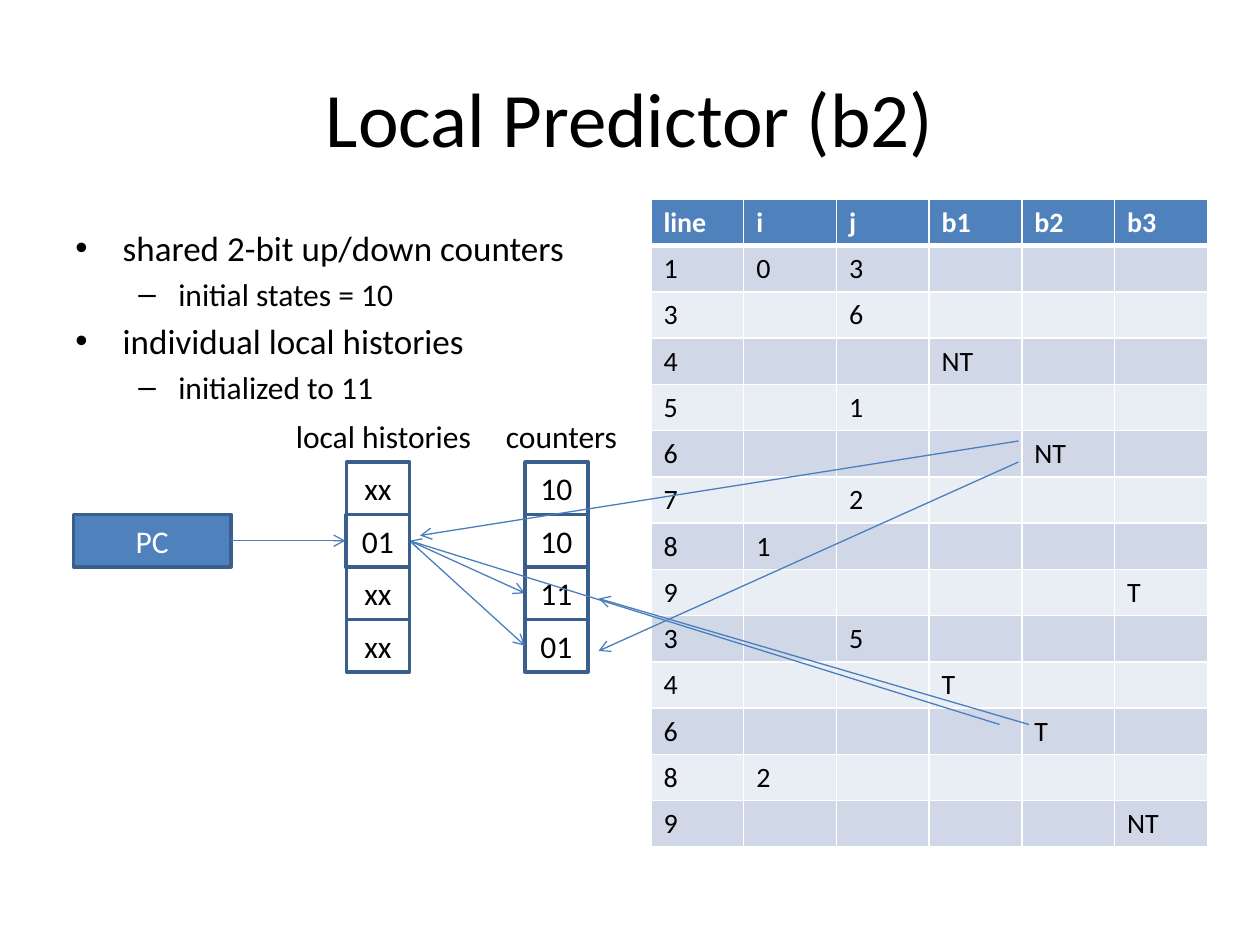
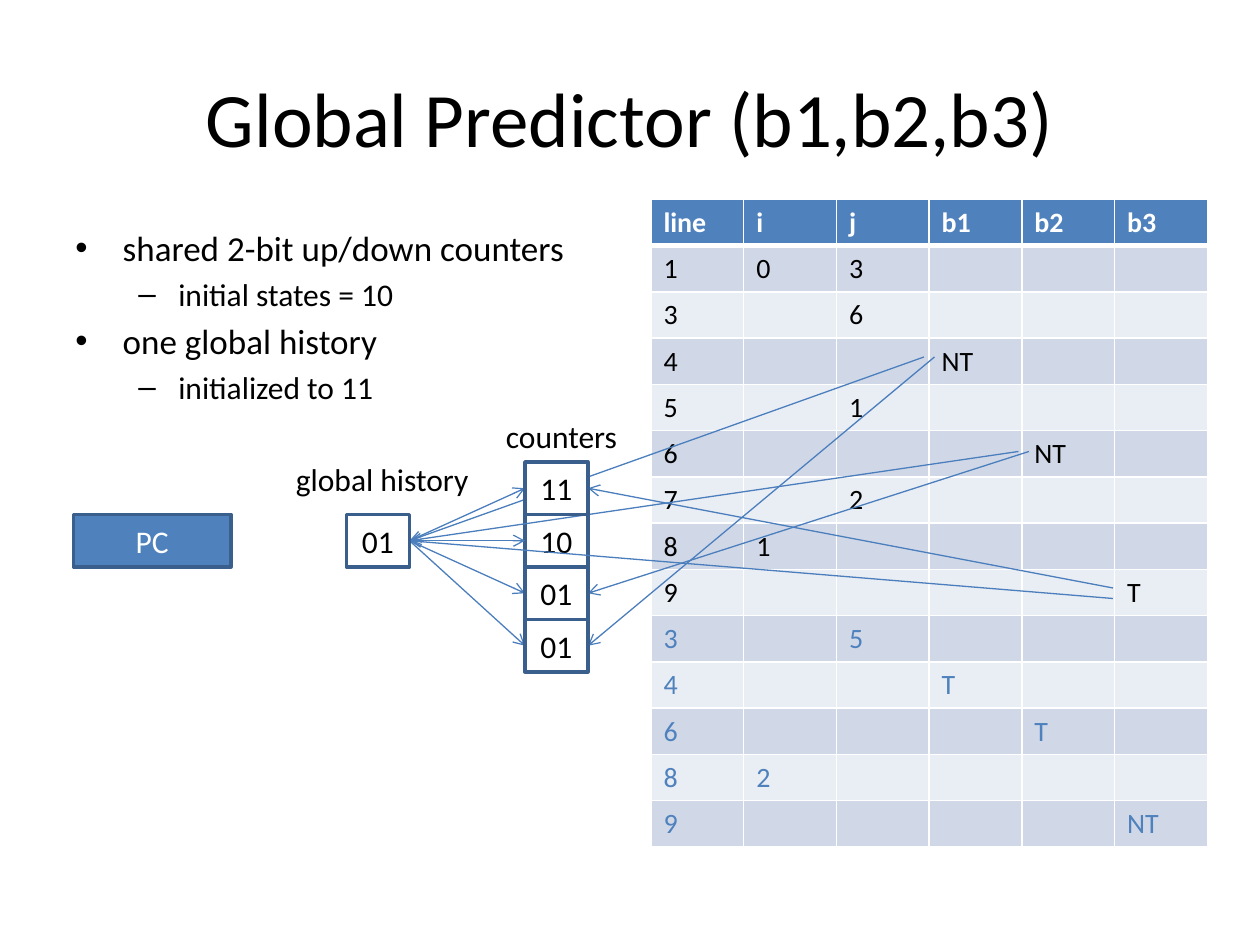
import dataclasses
import typing

import pptx
import pptx.dml.color
import pptx.enum.shapes
import pptx.enum.text
import pptx.oxml
import pptx.oxml.ns
import pptx.util

# Shared look
SCALE = 7620  # EMU in one px, 120 px to the inch
FONT = "Calibri"
BLACK, WHITE, BLUE = "000000", "FFFFFF", "4F81BD"
EDGE, LINK = "3A5F8C", "4B7EBC"
BANDS = ("D0D8E8", "E9EDF4")
ALIGN = pptx.enum.text.PP_ALIGN
MIDDLE = pptx.enum.text.MSO_ANCHOR.MIDDLE

# Diagram grid
TOP, STEP = 440, 50
WIDE, HIST, COUNT = 60, 330, 500
PORT = (HIST + WIDE, TOP + STEP * 3 // 2)

# Trace of the loop
HEAD = ("line", "i", "j", "b1", "b2", "b3")
TRACE = (
    ("1", "0", "3", "", "", ""),
    ("3", "", "6", "", "", ""),
    ("4", "", "", "NT", "", ""),
    ("5", "", "1", "", "", ""),
    ("6", "", "", "", "NT", ""),
    ("7", "", "2", "", "", ""),
    ("8", "1", "", "", "", ""),
    ("9", "", "", "", "", "T"),
    ("3", "", "5", "", "", ""),
    ("4", "", "", "T", "", ""),
    ("6", "", "", "", "T", ""),
    ("8", "2", "", "", "", ""),
    ("9", "", "", "", "", "NT"),
)

Point = tuple[int, int]


@dataclasses.dataclass
class Box:
    text: str
    left: int
    top: int
    width: int = WIDE
    fill: str = WHITE
    ink: str = BLACK


@dataclasses.dataclass
class Label:
    text: str
    left: int
    top: int
    width: int


@dataclasses.dataclass
class Arrow:
    start: Point
    end: Point


@dataclasses.dataclass
class Page:
    title: str
    points: tuple[str, ...]
    done: int  # trace rows in black; later rows are blue
    marks: list[typing.Any]


def px(size: int) -> pptx.util.Emu:
    return pptx.util.Emu(size * SCALE)


def color(code: str) -> pptx.dml.color.RGBColor:
    return pptx.dml.color.RGBColor.from_string(code)


def style(para, size: int, ink: str = BLACK, bold: bool = False) -> None:
    para.font.name = FONT
    para.font.size = pptx.util.Pt(size)
    para.font.bold = bold
    para.font.color.rgb = color(ink)


def node(name: str, attrs: str = "", inner: str = ""):
    space = pptx.oxml.ns.nsdecls("a")
    return pptx.oxml.parse_xml(f"<a:{name} {space} {attrs}>{inner}</a:{name}>")


# Grid helpers
def level(row: int) -> int:
    return TOP + STEP * row


def count(row: int, text: str) -> Box:
    return Box(text, COUNT, level(row))


def past(row: int, text: str) -> Box:
    return Box(text, HIST, level(row))


def near(row: int) -> Point:
    return COUNT, level(row) + STEP // 2


def far(row: int) -> Point:
    return COUNT + WIDE, level(row) + STEP // 2


# Drawing
def draw_title(slide, text: str) -> None:
    frame = slide.shapes.add_textbox(px(60), px(36), px(1080), px(150)).text_frame
    frame.word_wrap = True
    frame.vertical_anchor = MIDDLE
    para = frame.paragraphs[0]
    para.text = text
    para.alignment = ALIGN.CENTER
    style(para, 44)


def draw_points(slide, points: tuple[str, ...]) -> None:
    """Main points and their details take turns."""
    frame = slide.shapes.add_textbox(px(60), px(210), px(560), px(594)).text_frame
    frame.word_wrap = True
    for i, text in enumerate(points):
        para = frame.paragraphs[0] if i == 0 else frame.add_paragraph()
        size, mark, left, hang = ((20, "•", 45, 45), (18, "–", 98, 38))[i % 2]
        para.text = text
        para.level = i % 2
        props = para._p.get_or_add_pPr()
        props.set("marL", str(px(left)))
        props.set("indent", str(-px(hang)))
        props.append(node("buFont", 'typeface="Arial"'))
        props.append(node("buChar", f'char="{mark}"'))
        para.space_before = pptx.util.Pt(size * 0.2)
        style(para, size)


def draw_cell(cell, text: str, fill: str, ink: str, head: bool) -> None:
    cell.fill.solid()
    cell.fill.fore_color.rgb = color(fill)
    if not text:
        cell.margin_top = cell.margin_bottom = 0
    para = cell.text_frame.paragraphs[0]
    para.text = text
    style(para, 16, ink, head)
    props = cell._tc.get_or_add_tcPr()
    paint = f'<a:solidFill><a:srgbClr val="{WHITE}"/></a:solidFill>'
    for i, side in enumerate("LRTB"):
        width = pptx.util.Pt(3 if head and side == "B" else 1)
        props.insert(i, node(f"ln{side}", f'w="{width}"', paint))


def draw_trace(slide, done: int) -> None:
    rows = (HEAD,) + TRACE
    frame = slide.shapes.add_table(len(rows), len(HEAD), px(620), px(190), px(530), px(44 * len(rows)))
    for r, row in enumerate(rows):
        head = r == 0
        fill = BLUE if head else BANDS[(r - 1) % 2]
        ink = WHITE if head else BLACK if r <= done else BLUE
        for c, text in enumerate(row):
            draw_cell(frame.table.cell(r, c), text, fill, ink, head)


def draw_box(slide, box: Box) -> None:
    kind = pptx.enum.shapes.MSO_SHAPE.RECTANGLE
    shape = slide.shapes.add_shape(kind, px(box.left), px(box.top), px(box.width), px(STEP))
    shape.shadow.inherit = False
    shape.fill.solid()
    shape.fill.fore_color.rgb = color(box.fill)
    shape.line.color.rgb = color(EDGE)
    shape.line.width = pptx.util.Pt(2)
    shape.text_frame.vertical_anchor = MIDDLE
    para = shape.text_frame.paragraphs[0]
    para.text = box.text
    para.alignment = ALIGN.CENTER
    style(para, 18, box.ink)


def draw_label(slide, label: Label) -> None:
    frame = slide.shapes.add_textbox(px(label.left), px(label.top), px(label.width), px(48)).text_frame
    frame.word_wrap = False
    para = frame.paragraphs[0]
    para.text = label.text
    style(para, 18)


def draw_arrow(slide, arrow: Arrow) -> None:
    kind = pptx.enum.shapes.MSO_CONNECTOR.STRAIGHT
    ends = [px(n) for n in arrow.start + arrow.end]
    wire = slide.shapes.add_connector(kind, *ends)
    wire.line.color.rgb = color(LINK)
    wire.line.width = pptx.util.Pt(0.75)
    props = wire._element.spPr
    props.find(pptx.oxml.ns.qn("a:ln")).append(node("tailEnd", 'type="arrow"'))
    props.append(node("effectLst"))


DRAW = {Box: draw_box, Label: draw_label, Arrow: draw_arrow}

# Marks on both slides
SHARED = [
    Label("counters", 470, 391, 131),
    Box("PC", 70, level(1), 150, BLUE, WHITE),
    count(1, "10"),
]

LOCAL = Page(
    "Local Predictor (b2)",
    ("shared 2-bit up/down counters", "initial states = 10",
     "individual local histories", "initialized to 11"),
    len(TRACE),
    [
        count(0, "10"),
        Label("local histories", 270, 391, 193),
        Box("", HIST - 1, level(1)),
        *(past(row, "xx") for row in (0, 3, 2)),
        Arrow((220, PORT[1]), (HIST - 1, PORT[1])),
        Arrow((970, 440), (570, 620)),
        Arrow((970, 420), (400, 510)),
        count(3, "01"),
        Arrow(PORT, near(3)),
        Arrow(PORT, near(2)),
        Arrow((980, 690), (570, 570)),
        count(2, "11"),
        Arrow((952, 690), PORT),
        past(1, "01"),
    ],
)

GLOBAL = Page(
    "Global Predictor (b1,b2,b3)",
    ("shared 2-bit up/down counters", "initial states = 10",
     "one global history", "initialized to 11"),
    8,
    [
        Label("global history", 270, 432, 191),
        *(Arrow(PORT, near(row)) for row in (3, 2, 1, 0)),
        Arrow((890, 340), far(3)),
        count(3, "01"),
        Arrow((880, 340), PORT),
        Arrow((980, 430), far(2)),
        count(2, "01"),
        Arrow((970, 430), PORT),
        Arrow((1060, 560), far(0)),
        count(0, "11"),
        Arrow((1060, 570), PORT),
        past(1, "01"),
    ],
)


def main() -> None:
    deck = pptx.Presentation()
    deck.slide_width, deck.slide_height = px(1200), px(900)
    for page in (LOCAL, GLOBAL):
        slide = deck.slides.add_slide(deck.slide_layouts[6])
        draw_title(slide, page.title)
        draw_points(slide, page.points)
        draw_trace(slide, page.done)
        for mark in SHARED + page.marks:
            DRAW[type(mark)](slide, mark)
    deck.save("out.pptx")


if __name__ == "__main__":
    main()
